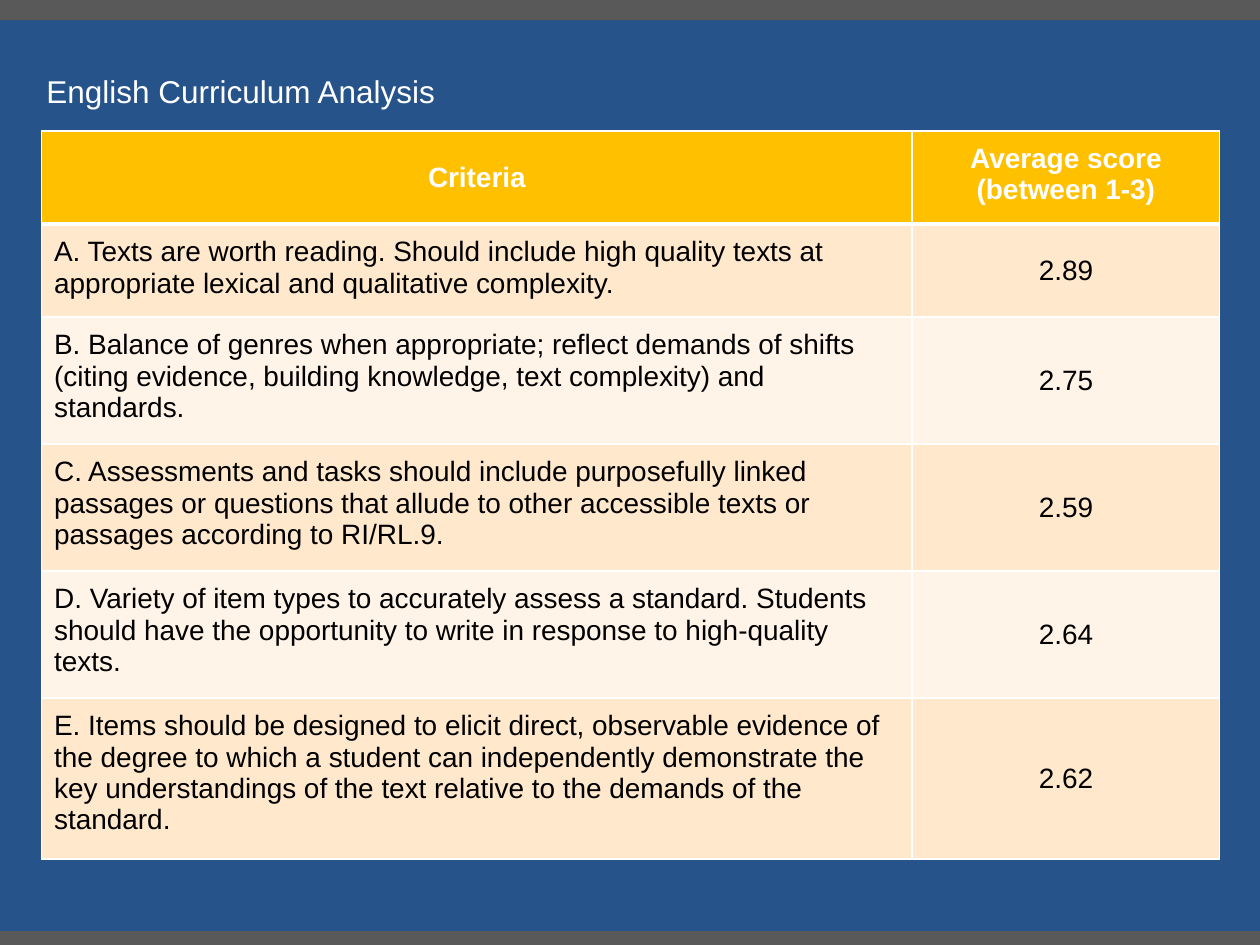
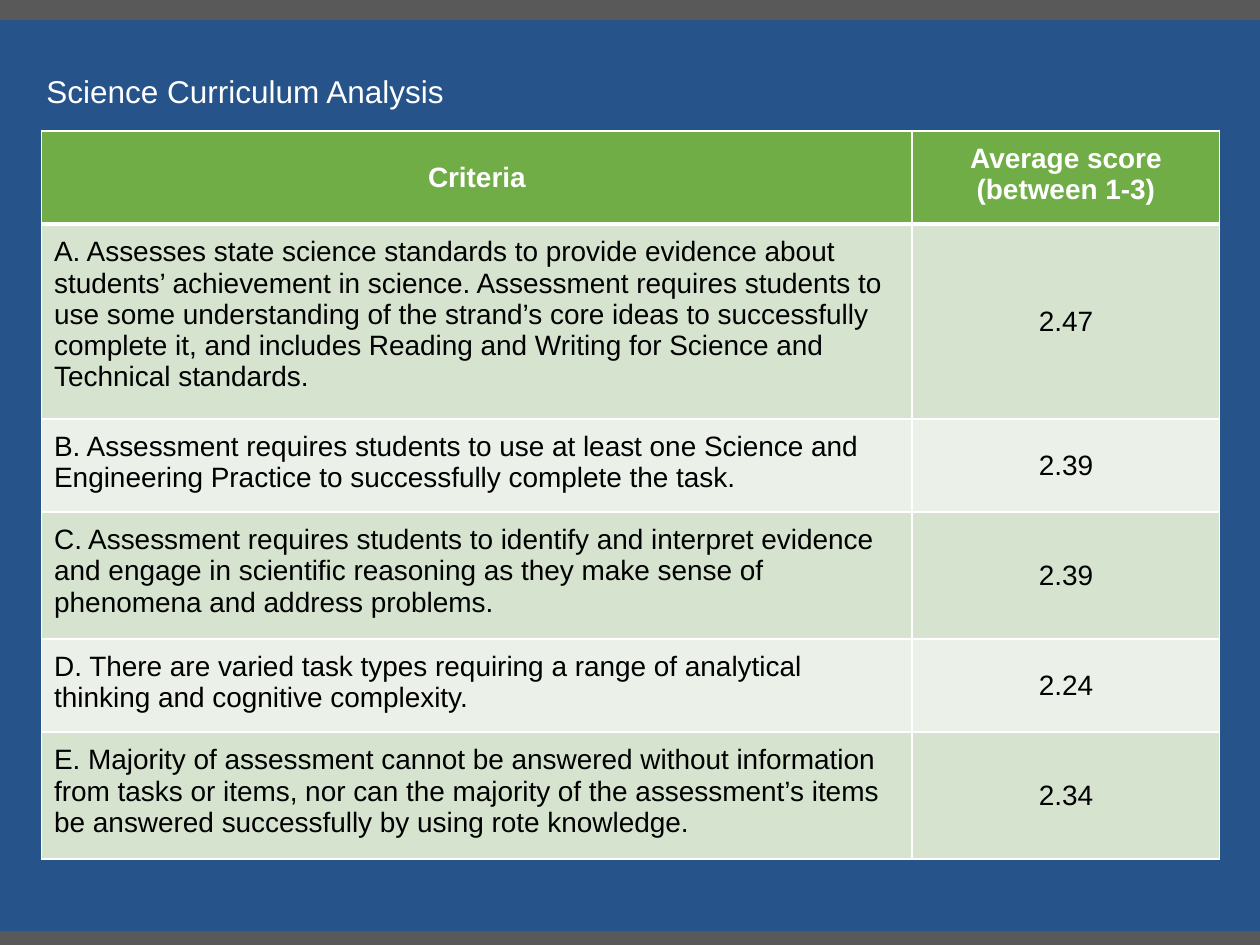
from dataclasses import dataclass

from lxml.etree import SubElement
from pptx import Presentation
from pptx.dml.color import RGBColor
from pptx.enum.shapes import MSO_SHAPE
from pptx.enum.text import MSO_ANCHOR, MSO_AUTO_SIZE, PP_ALIGN
from pptx.oxml.ns import qn
from pptx.util import Inches, Pt


@dataclass(frozen=True)
class Theme:
    font: str = "Arial"
    title_size: int = 18
    table_size: int = 16
    background: str = "26538A"
    band: str = "595959"
    light: str = "FFFFFF"
    dark: str = "000000"
    thin: float = 1
    thick: float = 3


theme = Theme()


def style_paragraph(paragraph, size, color, bold=False, alignment=PP_ALIGN.LEFT):
    paragraph.alignment = alignment
    for span in paragraph.runs:
        span.font.name = theme.font
        span.font.size = Pt(size)
        span.font.bold = bold
        span.font.color.rgb = RGBColor.from_string(color)


def add_border(cell, side, width):
    line = SubElement(cell._tc.get_or_add_tcPr(), qn(f"a:ln{side}"), w=str(Pt(width)))
    fill = SubElement(line, qn("a:solidFill"))
    SubElement(fill, qn("a:srgbClr"), val=theme.light)


header = ("Criteria", "Average score\n(between 1-3)", 2)

analyses = [
    {
        "title": "English Curriculum Analysis",
        "header_fill": "FFC000",
        "row_fills": ("FFE8CC", "FFF4E7"),
        "criteria": [
            ("A. Texts are worth reading. Should include high quality texts at "
             "appropriate lexical and qualitative complexity.", "2.89", 2),
            ("B. Balance of genres when appropriate; reflect demands of shifts "
             "(citing evidence, building knowledge, text complexity) and "
             "standards.", "2.75", 3),
            ("C. Assessments and tasks should include purposefully linked "
             "passages or questions that allude to other accessible texts or "
             "passages according to RI/RL.9.", "2.59", 3),
            ("D. Variety of item types to accurately assess a standard. Students "
             "should have the opportunity to write in response to high-quality "
             "texts.", "2.64", 3),
            ("E. Items should be designed to elicit direct, observable evidence of "
             "the degree to which a student can independently demonstrate the "
             "key understandings of the text relative to the demands of the "
             "standard.", "2.62", 4),
        ],
    },
    {
        "title": "Science Curriculum Analysis",
        "header_fill": "70AD47",
        "row_fills": ("D5E3CF", "EBF1E9"),
        "criteria": [
            ("A. Assesses state science standards to provide evidence about "
             "students’ achievement in science. Assessment requires students to "
             "use some understanding of the strand’s core ideas to successfully "
             "complete it, and includes Reading and Writing for Science and "
             "Technical standards.", "2.47", 5),
            ("B. Assessment requires students to use at least one Science and "
             "Engineering Practice to successfully complete the task.", "2.39", 2),
            ("C. Assessment requires students to identify and interpret evidence "
             "and engage in scientific reasoning as they make sense of "
             "phenomena and address problems.", "2.39", 3),
            ("D. There are varied task types requiring a range of analytical "
             "thinking and cognitive complexity.", "2.24", 2),
            ("E. Majority of assessment cannot be answered without information "
             "from tasks or items, nor can the majority of the assessment’s items "
             "be answered successfully by using rote knowledge.", "2.34", 3),
        ],
    },
]

deck = Presentation()
deck.slide_width = Inches(10)
deck.slide_height = Inches(7.5)
blank_layout = deck.slide_layouts[6]

band_height = Inches(0.16)
band_tops = (Inches(7.39), 0)
table_left, table_top = Inches(0.33), Inches(1.04)
table_width, table_height = Inches(9.35), Inches(5.78)
score_width = Inches(2.44)
cell_margin = Inches(0.1)

for analysis in analyses:
    page = deck.slides.add_slide(blank_layout)
    page.background.fill.solid()
    page.background.fill.fore_color.rgb = RGBColor.from_string(theme.background)

    for band_top in band_tops:
        band = page.shapes.add_shape(
            MSO_SHAPE.RECTANGLE, 0, band_top, deck.slide_width, band_height)
        band.shadow.inherit = False
        band.fill.solid()
        band.fill.fore_color.rgb = RGBColor.from_string(theme.band)
        band.line.fill.background()

    title_box = page.shapes.add_textbox(Inches(0.27), Inches(0.52), Inches(7.77), Inches(0.4))
    title_box.text_frame.word_wrap = True
    title_box.text_frame.auto_size = MSO_AUTO_SIZE.SHAPE_TO_FIT_TEXT
    title_box.text_frame.text = analysis["title"]
    style_paragraph(title_box.text_frame.paragraphs[0], theme.title_size, theme.light)

    rows = [header] + analysis["criteria"]
    table = page.shapes.add_table(
        len(rows), 2, table_left, table_top, table_width, table_height).table
    table.columns[0].width = table_width - score_width
    table.columns[1].width = score_width
    line_total = sum(lines for _, _, lines in rows)
    line_height = (table_height - 2 * cell_margin * len(rows)) / line_total

    for row_index, (criterion, score, lines) in enumerate(rows):
        is_header = row_index == 0
        table.rows[row_index].height = int(2 * cell_margin + lines * line_height)
        row_fill = analysis["header_fill"] if is_header else analysis["row_fills"][(row_index - 1) % 2]
        top_width = theme.thick if row_index == 1 else theme.thin
        bottom_width = theme.thick if is_header else theme.thin

        for column_index, text in enumerate((criterion, score)):
            cell = table.cell(row_index, column_index)
            cell.margin_left = cell.margin_right = cell_margin
            cell.margin_top = cell.margin_bottom = cell_margin
            is_middle = is_header != (column_index == 1)
            cell.vertical_anchor = MSO_ANCHOR.MIDDLE if is_middle else MSO_ANCHOR.TOP
            for side, width in (("L", theme.thin), ("R", theme.thin),
                                ("T", top_width), ("B", bottom_width)):
                add_border(cell, side, width)
            cell.fill.solid()
            cell.fill.fore_color.rgb = RGBColor.from_string(row_fill)
            cell.text_frame.text = text
            for paragraph in cell.text_frame.paragraphs:
                style_paragraph(
                    paragraph, theme.table_size,
                    theme.light if is_header else theme.dark, is_header,
                    PP_ALIGN.CENTER if is_header or column_index == 1 else PP_ALIGN.LEFT)

deck.save("out.pptx")
